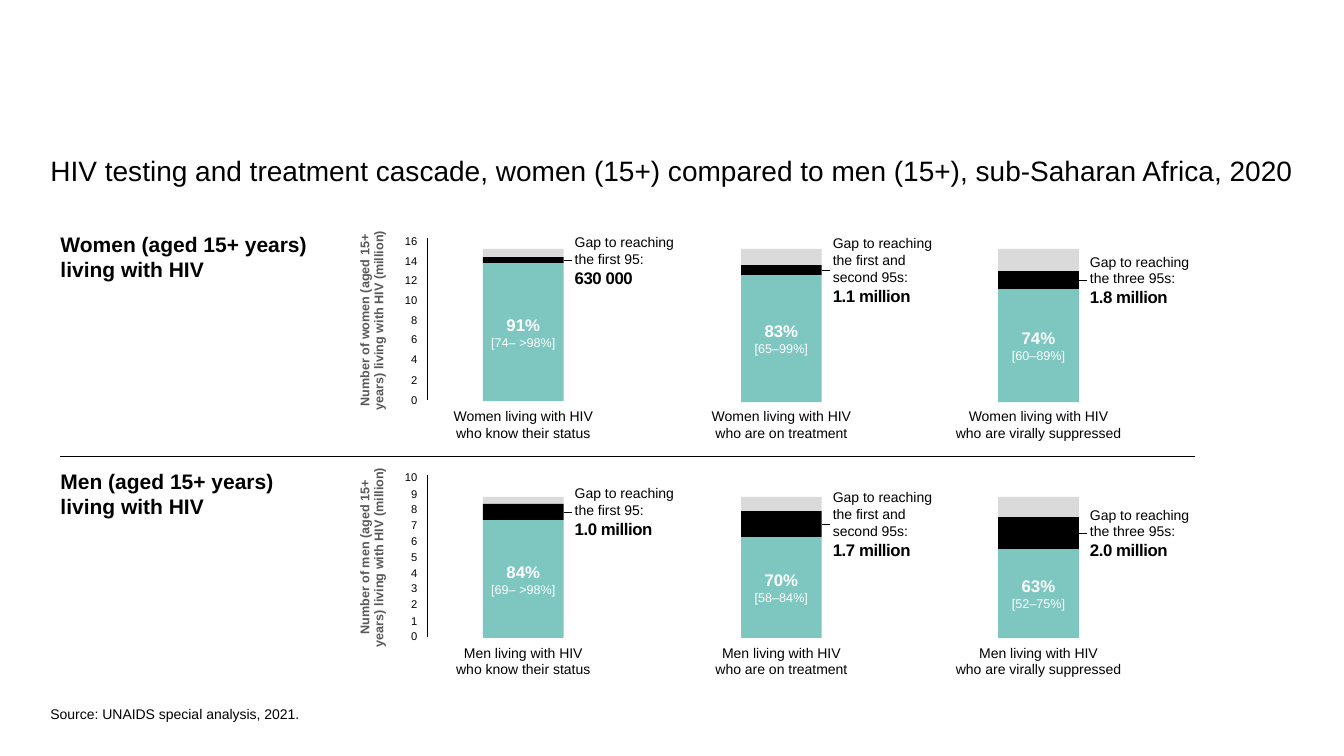
from dataclasses import dataclass

from lxml.etree import SubElement
from pptx import Presentation
from pptx.dml.color import RGBColor
from pptx.enum.shapes import MSO_CONNECTOR, MSO_SHAPE
from pptx.enum.text import MSO_ANCHOR, PP_ALIGN
from pptx.oxml.ns import qn
from pptx.util import Pt

PX = 9144  # EMU per px, 100 px to the inch


@dataclass(frozen=True)
class Theme:
    font: str = "Arial"
    black: RGBColor = RGBColor(0x00, 0x00, 0x00)
    white: RGBColor = RGBColor(0xFF, 0xFF, 0xFF)
    grey: RGBColor = RGBColor(0x59, 0x59, 0x59)
    reached: RGBColor = RGBColor(0x7D, 0xC7, 0xC0)
    beyond: RGBColor = RGBColor(0xDA, 0xDA, 0xDA)
    title: int = 20
    heading: int = 15
    strong: int = 12
    body: int = 10
    small: int = 9
    tick: int = 8


theme = Theme()
prs = Presentation()
prs.slide_width, prs.slide_height = 1333 * PX, 750 * PX
slide = prs.slides.add_slide(prs.slide_layouts[6])
shapes = slide.shapes


def write(shape, lines, color=theme.black, align=PP_ALIGN.LEFT):
    """Fill a shape with one paragraph per (text, size, bold) line."""
    frame = shape.text_frame
    frame.word_wrap = True
    frame.margin_left = frame.margin_right = frame.margin_top = frame.margin_bottom = 0
    for index, (text, size, bold) in enumerate(lines):
        paragraph = frame.add_paragraph() if index else frame.paragraphs[0]
        paragraph.text = text
        paragraph.alignment = align
        paragraph.font.name = theme.font
        paragraph.font.size = Pt(size)
        paragraph.font.bold = bold
        paragraph.font.color.rgb = color
    return frame


def draw_line(x1, y1, x2, y2, width):
    line = shapes.add_connector(MSO_CONNECTOR.STRAIGHT, x1, y1, x2, y2)
    line.line.color.rgb = theme.black
    line.line.width = Pt(width)
    SubElement(line._element.spPr, qn("a:effectLst"))
    return line


title = shapes.add_textbox(50 * PX, 152 * PX, 1250 * PX, 36 * PX)
write(title, [("HIV testing and treatment cascade, women (15+) compared to men (15+), "
               "sub-Saharan Africa, 2020", theme.title, False)])
source = shapes.add_textbox(50 * PX, 700 * PX, 250 * PX, 17 * PX)
write(source, [("Source: UNAIDS special analysis, 2021.", theme.body, False)])
draw_line(60 * PX, 453 * PX, 1185 * PX, 453 * PX, 0.25)

BAR_WIDTH = 80
CATEGORY_WIDTH = 176
AXIS_HEIGHT = 161
TICK_SPAN = 157.5

# Each stage: left of its bar, end of the category, target of the gap
stages = [
    (479, "who know their status", "first 95:"),
    (735, "who are on treatment", "first and second 95s:"),
    (990, "who are virally suppressed", "three 95s:"),
]

# Bars: edges from top to bottom, share, range, gap, top of the gap label
groups = [
    ("Women", 228, 16, 2, [
        ((247, 255, 261, 398), "91%", "[74– >98%]", "630 000", 230),
        ((247, 263, 273, 399), "83%", "[65–99%]", "1.1 million", 231),
        ((247, 269, 287, 399), "74%", "[60–89%]", "1.8 million", 249),
    ]),
    ("Men", 463, 10, 1, [
        ((493, 500, 516, 633), "84%", "[69– >98%]", "1.0 million", 479),
        ((493, 507, 533, 633), "70%", "[58–84%]", "1.7 million", 483),
        ((493, 513, 545, 633), "63%", "[52–75%]", "2.0 million", 500),
    ]),
]

for group, top, axis_max, step, bars in groups:
    heading = shapes.add_textbox(60 * PX, (top + 2) * PX, 260 * PX, 50 * PX)
    write(heading, [(f"{group} (aged 15+ years) living with HIV", theme.heading, True)])

    axis_title = shapes.add_textbox(355 * PX, (top - 18) * PX, 28 * PX, 216 * PX)
    frame = write(axis_title, [
        (f"Number of {group.lower()} (aged 15+", theme.small, True),
        ("years) living with HIV (million)", theme.small, True),
    ], theme.grey, PP_ALIGN.CENTER)
    frame._txBody.bodyPr.set("vert", "vert270")
    for paragraph in frame.paragraphs:
        paragraph.line_spacing = Pt(10)

    axis_top = top + 8
    draw_line(424 * PX, axis_top * PX, 424 * PX, (axis_top + AXIS_HEIGHT) * PX, 0.75)
    for value in range(0, axis_max + 1, step):
        tick_top = round(top + 4 + TICK_SPAN * (1 - value / axis_max))
        tick = shapes.add_textbox(394 * PX, tick_top * PX, 20 * PX, 13 * PX)
        write(tick, [(str(value), theme.tick, False)], align=PP_ALIGN.RIGHT)

    for (left, ending, target), (edges, share, bounds, missing, label_top) in zip(stages, bars):
        segments = []
        for upper, lower, color in zip(edges, edges[1:], (theme.beyond, theme.black, theme.reached)):
            segment = shapes.add_shape(MSO_SHAPE.RECTANGLE, left * PX, upper * PX,
                                       BAR_WIDTH * PX, (lower - upper) * PX)
            segment.shadow.inherit = False
            segment.fill.solid()
            segment.fill.fore_color.rgb = color
            segment.line.fill.background()
            segments.append(segment)
        beyond, gap, reached = segments

        frame = write(reached, [(share, theme.strong, True), (bounds, theme.small, False)],
                      theme.white, PP_ALIGN.CENTER)
        frame.vertical_anchor = MSO_ANCHOR.MIDDLE

        gap_right, gap_middle = gap.left + gap.width, gap.top + gap.height // 2
        leader = draw_line(gap_right, gap_middle, gap_right + 8 * PX, gap_middle, 0.25)
        leader.begin_connect(gap, 3)

        gap_label = shapes.add_textbox((left + 91) * PX, (label_top + 2) * PX, 109 * PX, 55 * PX)
        frame = write(gap_label, [(f"Gap to reaching the {target}", theme.body, False),
                                  (missing, theme.strong, True)])
        frame.paragraphs[1].runs[0]._r.get_or_add_rPr().set("spc", "-30")

        category_left = left + (BAR_WIDTH - CATEGORY_WIDTH) // 2
        category = shapes.add_textbox(category_left * PX, (top + 176) * PX,
                                      CATEGORY_WIDTH * PX, 34 * PX)
        write(category, [(f"{group} living with HIV\v{ending}", theme.body, False)],
              align=PP_ALIGN.CENTER)

prs.save("out.pptx")
